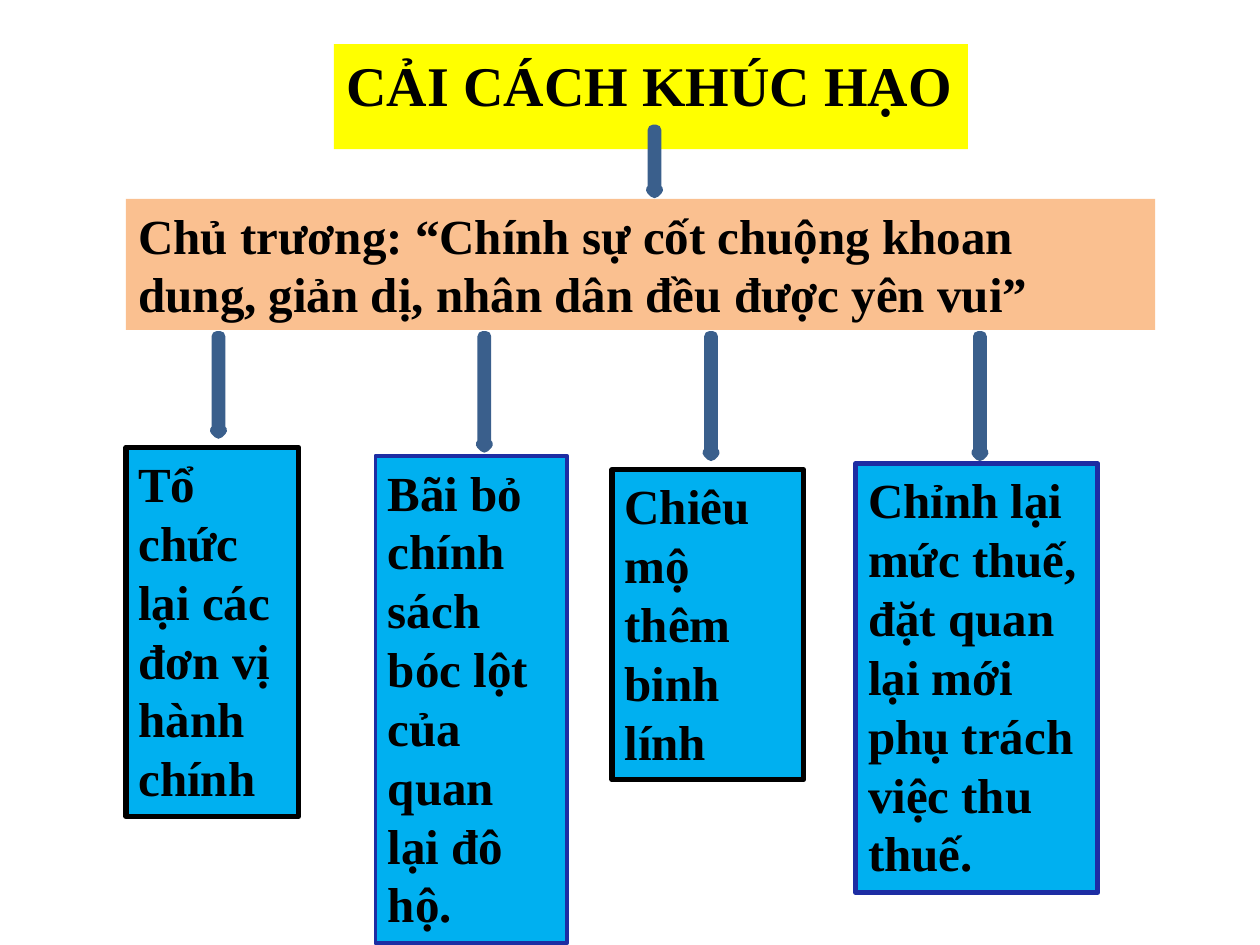
from pptx import Presentation
from pptx.dml.color import RGBColor
from pptx.enum.shapes import MSO_SHAPE
from pptx.enum.text import MSO_ANCHOR, MSO_AUTO_SIZE, PP_ALIGN
from pptx.util import Cm, Pt

COLORS = {
    "text": "000000", "title": "FFFF00", "policy": "FAC090", "reform": "00B0F0",
    "black": "000000", "navy": "1D2DA3", "arrow": "4F81BD", "arrow_edge": "3A5F8C",
}


def color(name):
    return RGBColor.from_string(COLORS[name])


def write(shape, text, *, fill, size=28, edge=None, edge_width=3):
    """Fill a box and set its bold, left-aligned text."""
    shape.fill.solid()
    shape.fill.fore_color.rgb = color(fill)
    if edge:
        shape.line.color.rgb = color(edge)
        shape.line.width = Pt(edge_width)
    else:
        shape.line.fill.background()
    frame = shape.text_frame
    frame.text = text
    frame.word_wrap = True
    frame.auto_size = MSO_AUTO_SIZE.SHAPE_TO_FIT_TEXT
    frame.vertical_anchor = MSO_ANCHOR.TOP
    paragraph = frame.paragraphs[0]
    paragraph.alignment = PP_ALIGN.LEFT
    font = paragraph.runs[0].font
    font.name, font.size, font.bold = "Times New Roman", Pt(size), True
    font.color.rgb = color("text")


prs = Presentation()
prs.slide_width, prs.slide_height = Cm(25.4), Cm(19.05)
slide = prs.slides.add_slide(prs.slide_layouts[5])

# Title
title = slide.shapes.title
title.left, title.top, title.width, title.height = Cm(6.73), Cm(0.89), Cm(12.78), Cm(1.63)
write(title, "CẢI CÁCH KHÚC HẠO", fill="title", size=32)

# Guiding policy
policy = slide.shapes.add_textbox(Cm(2.54), Cm(4.01), Cm(20.75), Cm(2.64))
write(policy, "Chủ trương: “Chính sự cốt chuộng khoan dung, giản dị, "
      "nhân dân đều được yên vui”", fill="policy")

# Arrows: title to policy, then policy to each reform
arrows = [
    (13.13, 2.62, 1.27),
    (4.34, 6.78, 1.96), (9.7, 6.78, 2.24), (14.27, 6.78, 2.41), (19.69, 6.78, 2.41),
]
for left, top, height in arrows:
    arrow = slide.shapes.add_shape(
        MSO_SHAPE.DOWN_ARROW, Cm(left), Cm(top), Cm(0.13), Cm(height))
    arrow.shadow.inherit = False
    arrow.fill.solid()
    arrow.fill.fore_color.rgb = color("arrow")
    arrow.line.color.rgb = color("arrow_edge")
    arrow.line.width = Pt(6)

# Reforms
reforms = [
    ("Tổ chức lại các đơn vị hành chính", 2.54, 9.02, 3.48, 7.44, "black", 3),
    ("Bãi bỏ chính sách bóc lột của quan lại đô hộ.", 7.57, 9.19, 3.86, 9.83, "navy", 2.25),
    ("Chiêu mộ thêm binh lính", 12.34, 9.47, 3.86, 6.25, "black", 3),
    ("Chỉnh lại mức thuế, đặt quan lại mới phụ trách việc thu thuế.",
     17.25, 9.35, 4.88, 8.64, "navy", 3),
]
for text, left, top, width, height, edge, edge_width in reforms:
    reform = slide.shapes.add_textbox(Cm(left), Cm(top), Cm(width), Cm(height))
    write(reform, text, fill="reform", edge=edge, edge_width=edge_width)

prs.save("out.pptx")
